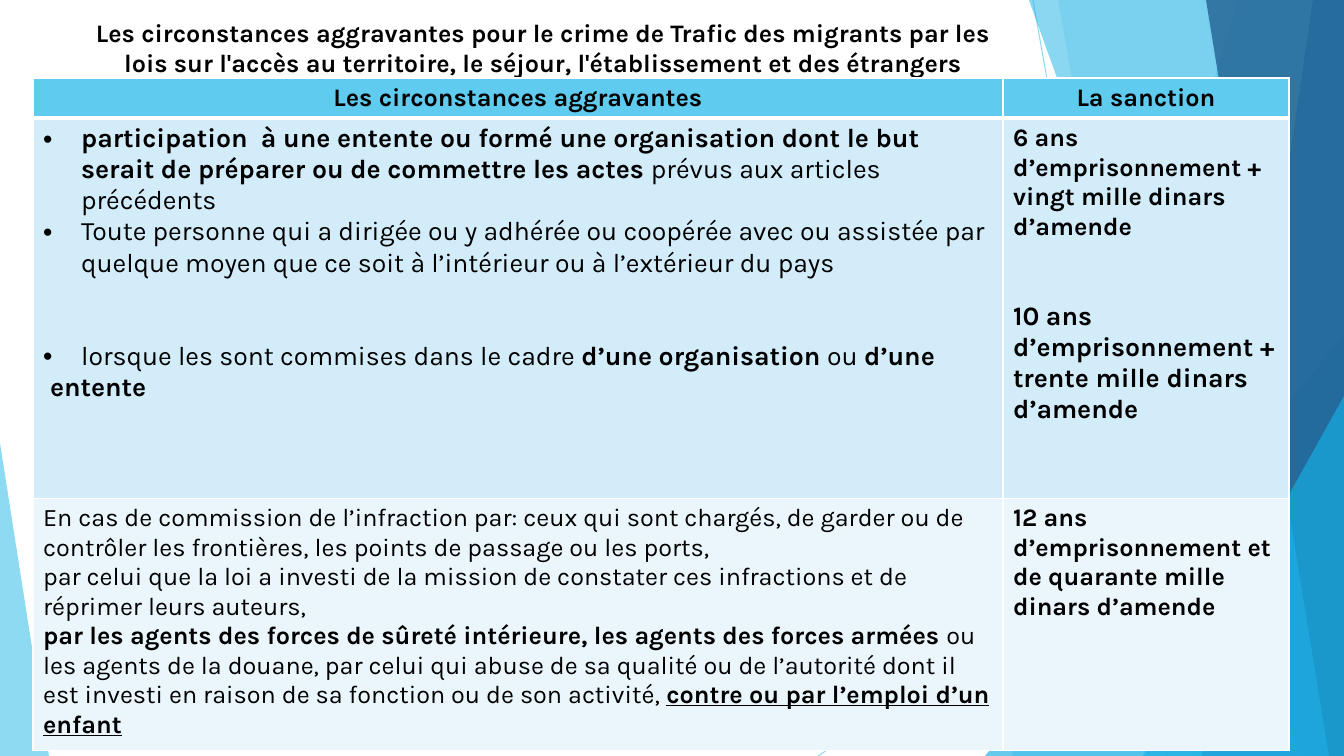
from typing import Any, NamedTuple

from lxml import etree
from pptx import Presentation, util as u
from pptx.dml.color import RGBColor
from pptx.enum import shapes, text
from pptx.oxml import ns

SCALE = 914400 / 100.8
WIDE, HIGH = 1344, 756
FONT = "Karla"
BLACK = RGBColor(0x00, 0x00, 0x00)
SKY = RGBColor(0x5F, 0xCB, 0xEF)
AZURE = RGBColor(0x17, 0xB0, 0xE4)
BLUE = RGBColor(0x2E, 0x83, 0xC3)
NAVY = RGBColor(0x22, 0x62, 0x92)
PALE = RGBColor(0xD2, 0xEC, 0xF9)
MIST = RGBColor(0xEA, 0xF6, 0xFC)


class Ray(NamedTuple):
    x1: int
    y1: int
    x2: int
    y2: int


class Band(NamedTuple):
    top: int
    base: int
    color: RGBColor
    alpha: int


class Peak(NamedTuple):
    x: int
    y: int
    wide: int
    high: int
    tip: float
    color: RGBColor
    alpha: int


class Run(NamedTuple):
    words: str
    bold: bool = False
    under: bool = False


class Para(NamedTuple):
    runs: list[Run]
    size: int = 18
    center: bool = False
    bullet: bool = False
    left: int = 0
    gap: int = 0


class Row(NamedTuple):
    high: int
    fill: RGBColor
    cells: list[list[Para]]
    top: int = 1
    base: int = 1


RAYS = [Ray(1033, 0, 1167, HIGH), Ray(WIDE, 406, 818, HIGH)]
DECOR = [
    Band(1238, 1012, SKY, 36),
    Band(1058, 1192, SKY, 20),
    Peak(985, 336, 359, 420, 1, AZURE, 66),
    Band(1029, 1301, AZURE, 50),
    Band(1313, 1202, BLUE, 70),
    Band(1206, 1329, NAVY, 80),
    Peak(1143, 396, 201, 360, 1, AZURE, 66),
    Peak(0, 443, 49, 313, 0, SKY, 70),
]
TITLE = Para([Run("Les circonstances aggravantes pour le crime de Trafic des migrants par les "
                  "lois sur l'accès au territoire, le séjour, l'établissement et des étrangers",
                  True)], center=True)
COLS = [970, 286]
ROWS = [
    Row(38, SKY, [
        [Para([Run("Les circonstances aggravantes", True)], center=True)],
        [Para([Run("La sanction", True)], center=True)],
    ], base=3),
    Row(380, PALE, [
        [
            Para([Run("participation  à une entente ou formé une organisation dont le but "
                      "serait de préparer ou de commettre les actes ", True),
                  Run("prévus aux articles précédents")], 19, bullet=True),
            Para([Run("Toute personne qui a dirigée ou y adhérée ou coopérée avec ou assistée "
                      "par quelque moyen que ce soit à l’intérieur ou à l’extérieur du pays")],
                 19, bullet=True),
            Para([Run("lorsque les sont commises dans le cadre "),
                  Run("d’une organisation ", True), Run("ou "), Run("d’une", True)],
                 19, bullet=True, gap=62),
            Para([Run("entente", True)], 19, left=7),
        ],
        [
            Para([Run("6 ans d’emprisonnement + vingt mille dinars d’amende", True)]),
            Para([Run("10 ans d’emprisonnement + trente mille dinars d’amende", True)],
                 19, gap=59),
        ],
    ], top=3),
    Row(247, MIST, [
        [
            Para([Run("En cas de commission de l’infraction par: ceux qui sont chargés, de "
                      "garder ou de contrôler les frontières, les points de passage ou les "
                      "ports,")]),
            Para([Run("par celui que la loi a investi de la mission de constater ces "
                      "infractions et de réprimer leurs auteurs,")]),
            Para([Run("par les agents des forces de sûreté intérieure, les agents des forces "
                      "armées ", True),
                  Run("ou les agents de la douane, par celui qui abuse de sa qualité ou de "
                      "l’autorité dont il est investi en raison de sa fonction ou de son "
                      "activité, "),
                  Run("contre ou par l’emploi d’un enfant", True, True)]),
        ],
        [Para([Run("12 ans d’emprisonnement et de quarante mille dinars d’amende", True)])],
    ]),
]


def px(n: int) -> u.Emu:
    """Turn px into EMU."""
    return u.Emu(round(n * SCALE))


def node(root: Any, tag: str, **attrs: str) -> Any:
    """Append a drawing element with attributes."""
    return etree.SubElement(root, ns.qn(tag), attrs)


def fade(shape: Any, alpha: int) -> None:
    """Set the opacity of the first colour in a shape."""
    color = next(shape._element.spPr.iter(ns.qn("a:srgbClr")))
    node(color, "a:alpha", val=str(alpha * 1000))


def draw_ray(slide: Any, ray: Ray) -> None:
    """Draw a thin slanted line."""
    line = slide.shapes.add_connector(shapes.MSO_CONNECTOR.STRAIGHT, *map(px, ray))
    line.line.color.rgb = SKY
    line.line.width = u.Pt(0.75)
    fade(line, 70)
    node(line._element.spPr, "a:effectLst")


def draw_decor(slide: Any, part: Band | Peak) -> None:
    """Draw a translucent band or triangle."""
    if isinstance(part, Band):
        pen = slide.shapes.build_freeform(part.top, 0, scale=SCALE)
        pen.add_line_segments([(WIDE, 0), (WIDE, HIGH), (part.base, HIGH)])
        shape = pen.convert_to_shape()
    else:
        kind = shapes.MSO_SHAPE.ISOSCELES_TRIANGLE
        shape = slide.shapes.add_shape(kind, *map(px, part[:4]))
        shape.adjustments[0] = part.tip
    shape.shadow.inherit = False
    shape.fill.solid()
    shape.fill.fore_color.rgb = part.color
    shape.line.fill.background()
    fade(shape, part.alpha)


def write(frame: Any, paras: list[Para]) -> None:
    """Write paragraphs into a text frame."""
    frame.word_wrap = True
    for i, item in enumerate(paras):
        para = frame.add_paragraph() if i else frame.paragraphs[0]
        para.alignment = text.PP_ALIGN.CENTER if item.center else text.PP_ALIGN.LEFT
        props = para._p.get_or_add_pPr()
        props.set("marL", str(px(38 if item.bullet else item.left)))
        props.set("indent", str(px(-38 if item.bullet else 0)))
        if item.bullet:
            node(props, "a:buFont", typeface="Arial")
            node(props, "a:buChar", char="•")
        if item.gap:
            para.space_before = px(item.gap)
        for part in item.runs:
            run = para.add_run()
            run.text = part.words
            font = run.font
            font.name, font.size = FONT, u.Pt(item.size)
            font.bold, font.underline = part.bold, part.under
            font.color.rgb = BLACK


def edge(cell: Any, row: Row) -> None:
    """Give a cell white borders."""
    props = cell._tc.get_or_add_tcPr()
    for i, (side, wide) in enumerate(zip("LRTB", (1, 1, row.top, row.base))):
        line = node(props, f"a:ln{side}", w=str(u.Pt(wide)))
        node(node(line, "a:solidFill"), "a:srgbClr", val="FFFFFF")
        props.insert(i, line)


def draw_table(slide: Any) -> None:
    """Draw the table of circumstances and sanctions."""
    high = sum(row.high for row in ROWS)
    box = map(px, (33, 78, sum(COLS), high))
    table = slide.shapes.add_table(len(ROWS), len(COLS), *box).table
    table.horz_banding = False
    for col, wide in zip(table.columns, COLS):
        col.width = px(wide)
    for i, row in enumerate(ROWS):
        table.rows[i].height = px(row.high)
        for j, paras in enumerate(row.cells):
            cell = table.cell(i, j)
            cell.fill.solid()
            cell.fill.fore_color.rgb = row.fill
            edge(cell, row)
            write(cell.text_frame, paras)


def main() -> None:
    """Build the slide and save it."""
    deck = Presentation()
    deck.slide_width, deck.slide_height = px(WIDE), px(HIGH)
    slide = deck.slides.add_slide(deck.slide_layouts[6])
    for ray in RAYS:
        draw_ray(slide, ray)
    for part in DECOR:
        draw_decor(slide, part)
    title = slide.shapes.add_textbox(*map(px, (69, 12, 948, 70)))
    write(title.text_frame, [TITLE])
    draw_table(slide)
    deck.save("out.pptx")


if __name__ == "__main__":
    main()
